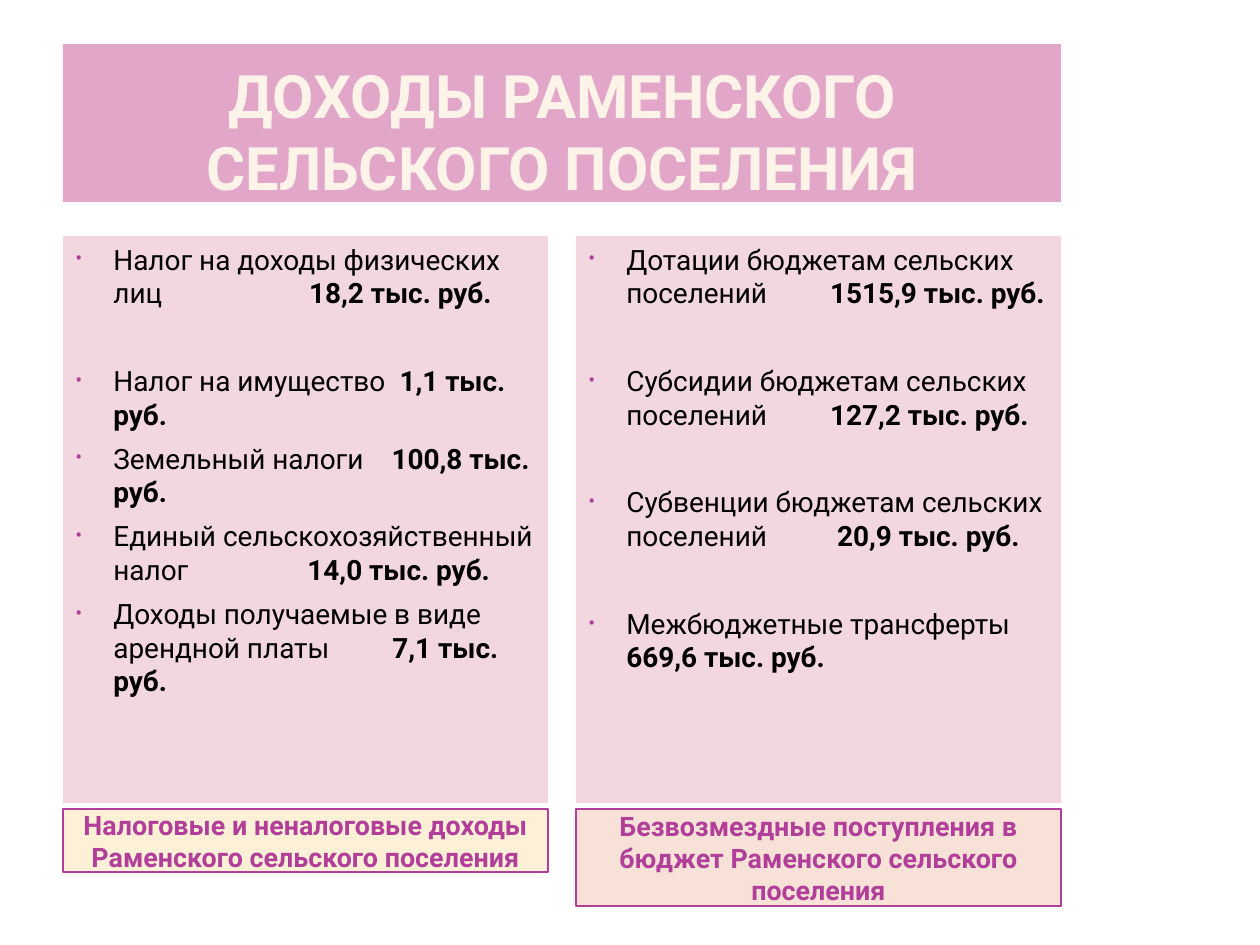
from dataclasses import dataclass

from lxml.etree import SubElement
from pptx import Presentation
from pptx.dml.color import RGBColor
from pptx.enum.shapes import MSO_SHAPE
from pptx.enum.text import MSO_ANCHOR, PP_ALIGN
from pptx.oxml.ns import qn
from pptx.util import Emu, Pt

PX_PER_INCH = 126
FONT = "Roboto"
SPACE_WIDTH = 4  # points, one space at body size

BLACK = RGBColor(0x00, 0x00, 0x00)
MAGENTA = RGBColor(0xB1, 0x3F, 0x9A)
ORCHID = RGBColor(0xE2, 0xA7, 0xC8)
IVORY = RGBColor(0xFE, 0xF3, 0xE8)
PINK = RGBColor(0xF2, 0xD7, 0xE0)
CREAM = RGBColor(0xFE, 0xF0, 0xD7)
PEACH = RGBColor(0xF8, 0xE2, 0xD7)

LEFT, GUTTER, COLUMN_WIDTH = 63, 28, 485
TITLE_TOP, TITLE_HEIGHT = 44, 158
PANEL_TOP, PANEL_HEIGHT = 236, 567
CAPTION_TOP = 809


@dataclass(frozen=True)
class Income:
    source: str
    amount: str
    gap: int = SPACE_WIDTH  # points between source and amount
    space_before: int = 6


@dataclass(frozen=True)
class Column:
    caption: str
    caption_fill: RGBColor
    caption_height: int
    incomes: tuple[Income, ...]


COLUMNS = (
    Column("Налоговые и неналоговые доходы Раменского сельского поселения", CREAM, 63, (
        Income("Налог на доходы физических лиц", "18,2 тыс. руб.", 84),
        Income("Налог на имущество", "1,1 тыс. руб.", 8, 31),
        Income("Земельный налоги", "100,8 тыс. руб.", 16),
        Income("Единый сельскохозяйственный налог", "14,0 тыс. руб.", 68),
        Income("Доходы получаемые в виде арендной платы", "7,1 тыс. руб.", 36),
    )),
    Column("Безвозмездные поступления в бюджет Раменского сельского поселения", PEACH, 97, (
        Income("Дотации бюджетам сельских поселений", "1515,9 тыс. руб.", 36),
        Income("Субсидии бюджетам сельских поселений", "127,2 тыс. руб.", 36, 31),
        Income("Субвенции бюджетам сельских поселений", "20,9 тыс. руб.", 40, 31),
        Income("Межбюджетные трансферты", "669,6 тыс. руб.", space_before=31),
    )),
)


def px(length: int) -> Emu:
    return Emu(round(length * 914400 / PX_PER_INCH))


def add_block(slide, left: int, top: int, width: int, height: int, fill: RGBColor,
              line: RGBColor | None = None, anchor=MSO_ANCHOR.TOP):
    """Add a filled rectangle and return its text frame."""
    block = slide.shapes.add_shape(MSO_SHAPE.RECTANGLE, px(left), px(top), px(width), px(height))
    block.shadow.inherit = False
    block.fill.solid()
    block.fill.fore_color.rgb = fill
    if line is None:
        block.line.fill.background()
    else:
        block.line.color.rgb = line
        block.line.width = Pt(1)
    block.text_frame.word_wrap = True
    block.text_frame.vertical_anchor = anchor
    return block.text_frame


def add_text(paragraph, text: str, *, size: float = 16, color: RGBColor = BLACK,
             bold: bool = False, align=PP_ALIGN.LEFT, spacing: int = 0) -> None:
    paragraph.alignment = align
    run = paragraph.add_run()
    run.text = text
    run.font.name = FONT
    run.font.size = Pt(size)
    run.font.bold = bold
    run.font.color.rgb = color
    if spacing:
        run._r.get_or_add_rPr().set("spc", str(spacing * 100))


def add_bullet(paragraph) -> None:
    properties = paragraph._p.get_or_add_pPr()
    indent = px(38)
    properties.set("marL", str(indent))
    properties.set("indent", str(-indent))
    color = SubElement(properties, qn("a:buClr"))
    SubElement(color, qn("a:srgbClr"), val=str(MAGENTA))
    SubElement(properties, qn("a:buSzPct"), val="73000")
    SubElement(properties, qn("a:buFont"), typeface=FONT)
    SubElement(properties, qn("a:buChar"), char="•")


def add_title(slide, text: str) -> None:
    frame = add_block(slide, LEFT, TITLE_TOP, 2 * COLUMN_WIDTH + GUTTER, TITLE_HEIGHT,
                      ORCHID, anchor=MSO_ANCHOR.BOTTOM)
    frame.margin_left = frame.margin_right = px(6)
    frame.margin_top = frame.margin_bottom = 0
    add_text(frame.paragraphs[0], text, size=34.2, color=IVORY, bold=True,
             align=PP_ALIGN.CENTER)


def add_column(slide, left: int, column: Column) -> None:
    panel = add_block(slide, left, PANEL_TOP, COLUMN_WIDTH, PANEL_HEIGHT, PINK)
    for index, income in enumerate(column.incomes):
        paragraph = panel.add_paragraph() if index else panel.paragraphs[0]
        add_bullet(paragraph)
        if index:
            paragraph.space_before = Pt(income.space_before)
        add_text(paragraph, income.source)
        add_text(paragraph, " ", spacing=income.gap - SPACE_WIDTH)
        add_text(paragraph, income.amount, bold=True)

    caption = add_block(slide, left, CAPTION_TOP, COLUMN_WIDTH, column.caption_height,
                        column.caption_fill, MAGENTA, MSO_ANCHOR.MIDDLE)
    add_text(caption.paragraphs[0], column.caption, size=15.3, color=MAGENTA, bold=True,
             align=PP_ALIGN.CENTER)


def main() -> None:
    presentation = Presentation()
    presentation.slide_width = px(1260)
    presentation.slide_height = px(945)
    slide = presentation.slides.add_slide(presentation.slide_layouts[6])
    add_title(slide, "ДОХОДЫ РАМЕНСКОГО СЕЛЬСКОГО ПОСЕЛЕНИЯ")
    for index, column in enumerate(COLUMNS):
        add_column(slide, LEFT + index * (COLUMN_WIDTH + GUTTER), column)
    presentation.save("out.pptx")


if __name__ == "__main__":
    main()
